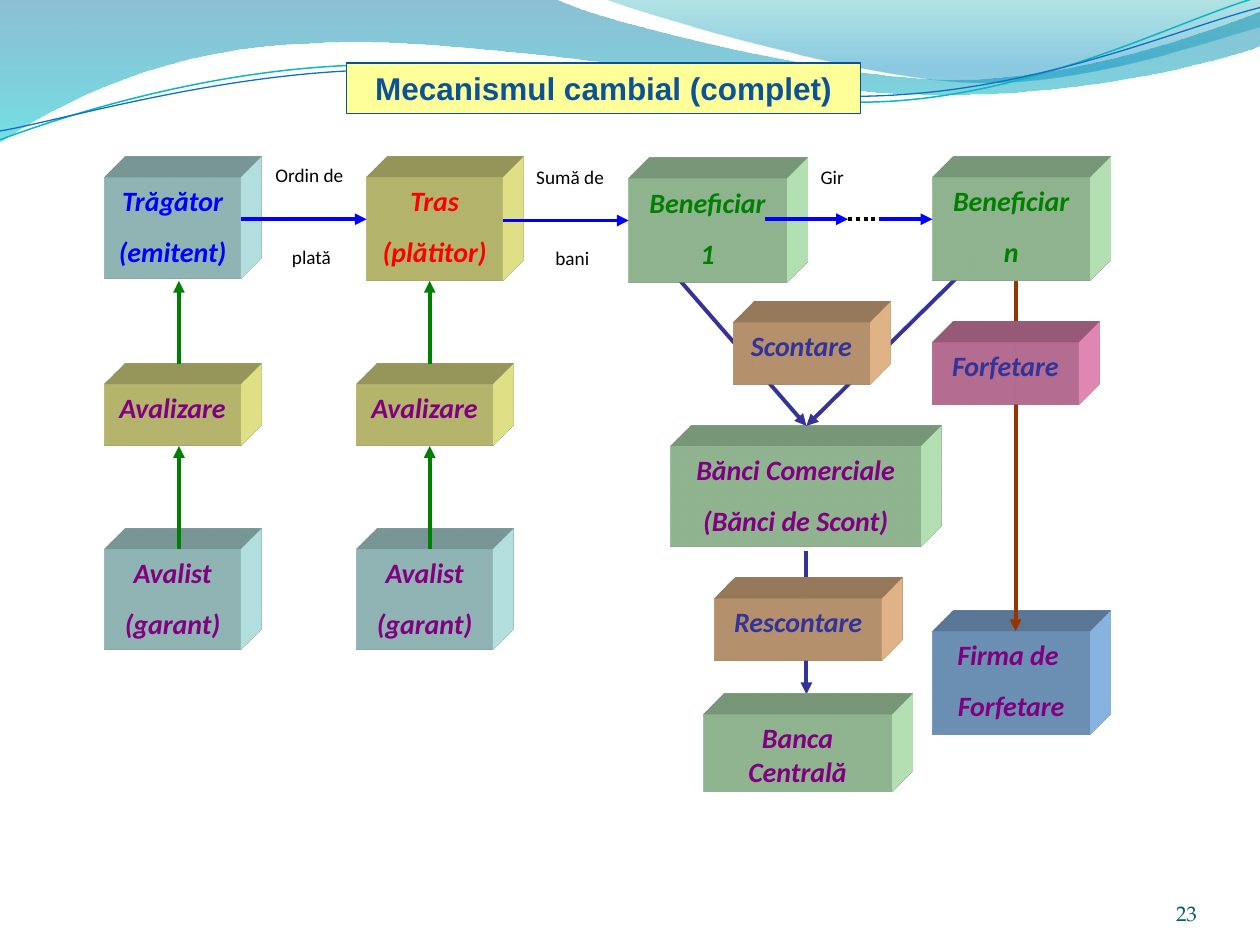
"""Builds the slide on the complete bill-of-exchange mechanism."""
from lxml import etree
from pptx import Presentation
from pptx.dml.color import RGBColor
from pptx.enum.dml import MSO_LINE
from pptx.enum.shapes import MSO_CONNECTOR, MSO_SHAPE
from pptx.enum.text import MSO_ANCHOR, PP_ALIGN
from pptx.oxml import parse_xml
from pptx.oxml.ns import nsdecls, qn
from pptx.util import Inches, Pt

RECT = MSO_SHAPE.RECTANGLE
STRAIGHT = MSO_CONNECTOR.STRAIGHT
DOTTED = MSO_LINE.ROUND_DOT
TOP, MIDDLE, BOTTOM = MSO_ANCHOR.TOP, MSO_ANCHOR.MIDDLE, MSO_ANCHOR.BOTTOM
CENTER, RIGHT = PP_ALIGN.CENTER, PP_ALIGN.RIGHT

COLORS = {
    "white": "FFFFFF", "black": "000000", "aqua": "CCFFFF", "yellow": "FFFF99",
    "mint": "CCFFCC", "peach": "FFCC99", "pink": "FF99CC", "sky": "99CCFF",
    "blue": "0000FF", "red": "FF0000", "green": "008000", "purple": "800080",
    "indigo": "333399", "brown": "993300", "title": "0B5394", "border": "095295",
    "number": "045D75", "teal_line": "0AB8BF", "blue_line": "0F6FC6",
    "deep_blue": "0074A1", "cyan": "00C6CF", "teal": "00A1A9", "azure": "008BBF",
}
FONTS = {
    "box": {"name": "Calibri", "size": Pt(16), "bold": True, "italic": True},
    "label": {"name": "Calibri", "size": Pt(11)},
    "title": {"name": "Arial", "size": Pt(18), "bold": True},
    "number": {"name": "TeX Gyre Pagella", "size": Pt(12)},
}


def rgb(name):
    """Return the named colour."""
    return RGBColor.from_string(COLORS[name])


class Board:
    """Holds the style and the slide being drawn."""

    def __init__(self, slide):
        self.shapes = slide.shapes

    def wave(self, start, segments, stops=None, line=None, width=0.75):
        """Draw a gradient band or an open curve from lines (2 numbers) and cubics (6)."""
        builder = self.shapes.build_freeform(*map(Inches, start), scale=1.0)
        ends = [tuple(map(Inches, seg[-2:])) for seg in segments]
        builder.add_line_segments(ends, close=bool(stops))
        sp = builder.convert_to_shape()
        self.bend(sp, segments)
        sp.shadow.inherit = False
        if not stops:
            sp.fill.background()
            sp.line.color.rgb = rgb(line)
            sp.line.width = Pt(width)
            return
        sp.line.fill.background()
        sp.fill.gradient()
        sp.fill.gradient_angle = 270
        for stop, (position, color, _) in zip(sp.fill.gradient_stops, stops):
            stop.position = position
            stop.color.rgb = rgb(color)
        for clr, (_, _, alpha) in zip(sp._element.spPr.iter(qn("a:srgbClr")), stops):
            etree.SubElement(clr, qn("a:alpha"), val=str(alpha * 1000))

    def bend(self, sp, segments):
        """Give the cubic segments of a freeform their control points."""
        for node, seg in zip(list(sp._element.iter(qn("a:lnTo"))), segments):
            if len(seg) == 6:
                node.tag = qn("a:cubicBezTo")
                for i, (x, y) in enumerate((seg[:2], seg[2:4])):
                    pt = etree.Element(qn("a:pt"), x=str(Inches(x) - sp.left),
                                       y=str(Inches(y) - sp.top))
                    node.insert(i, pt)

    def text(self, sp, lines, style, color, after=0, align=CENTER, anchor=TOP):
        """Write one paragraph per line into a shape."""
        tf = sp.text_frame
        tf.word_wrap = True
        tf.vertical_anchor = anchor
        for i, line in enumerate(lines):
            p = tf.paragraphs[0] if i == 0 else tf.add_paragraph()
            p.alignment = align
            p.space_after = Pt(after)
            r = p.add_run()
            r.text = line
            for key, value in FONTS[style].items():
                setattr(r.font, key, value)
            r.font.color.rgb = rgb(color)

    def rect(self, at, fill, line=None):
        """Add a plain rectangle."""
        sp = self.shapes.add_shape(RECT, *map(Inches, at))
        sp.shadow.inherit = False
        sp.fill.solid()
        sp.fill.fore_color.rgb = rgb(fill)
        if line:
            sp.line.color.rgb = rgb(line)
            sp.line.width = Pt(0.75)
        else:
            sp.line.fill.background()
        return sp

    def box(self, at, fill, color, *lines):
        """Add an extruded box with text."""
        sp = self.rect(at, fill)
        sp._element.spPr.append(parse_xml(
            f'<a:scene3d {nsdecls("a")}><a:camera prst="legacyObliqueTopRight"/>'
            '<a:lightRig rig="legacyFlat3" dir="b"/></a:scene3d>'))
        sp._element.spPr.append(parse_xml(
            f'<a:sp3d {nsdecls("a")} extrusionH="430200" prstMaterial="legacyMatte">'
            f'<a:extrusionClr><a:srgbClr val="{COLORS[fill]}"/></a:extrusionClr></a:sp3d>'))
        self.text(sp, lines, "box", color, after=10)

    def label(self, left, top, *lines):
        """Add a white caption whose lines sit above and below an arrow."""
        sp = self.rect((left, top, 0.91, 0.98), "white")
        self.text(sp, lines, "label", "black", after=33.4)

    def title(self, at, text):
        """Add the framed title."""
        self.text(self.rect(at, "yellow", "border"), [text], "title", "title", anchor=MIDDLE)

    def number(self, at, text):
        """Add the slide number."""
        sp = self.shapes.add_textbox(*map(Inches, at))
        for side in ("left", "top", "right", "bottom"):
            setattr(sp.text_frame, f"margin_{side}", 0)
        self.text(sp, [text], "number", "number", align=RIGHT, anchor=BOTTOM)

    def arrow(self, x1, y1, x2, y2, color, dash=None):
        """Add an arrow, or a headless line when dashed."""
        cx = self.shapes.add_connector(STRAIGHT, *map(Inches, (x1, y1, x2, y2)))
        cx.line.color.rgb = rgb(color)
        cx.line.width = Pt(2.25)
        if dash:
            cx.line.dash_style = dash
        else:
            etree.SubElement(cx.line._get_or_add_ln(), qn("a:tailEnd"), type="triangle")
        etree.SubElement(cx._element.spPr, qn("a:effectLst"))


def main():
    """Build and save the slide."""
    prs = Presentation()
    prs.slide_width, prs.slide_height = Inches(10), Inches(7.5)
    b = Board(prs.slides.add_slide(prs.slide_layouts[6]))

    b.wave((0, 0), [(4.4, -0.01), (4.76, 0.17, 6.64, 0.63, 7.58, 0.63),
                    (8.53, 0.63, 9.58, 0.26, 10, 0.09), (10.01, 0.36),
                    (9.83, 0.44, 8.7, 0.76, 7.46, 0.75), (6.22, 0.75, 3.82, 0.28, 2.57, 0.34),
                    (1.29, 0.36, 0.46, 0.83, -0.01, 1.13)],
           stops=[(0, "deep_blue", 45), (1, "cyan", 55)])
    b.wave((4.79, -0.01), [(5.09, 0.11, 6.82, 0.62, 7.69, 0.65),
                           (8.56, 0.69, 9.61, 0.32, 10, 0.21), (10, 0)],
           stops=[(0, "teal", 30), (0.8, "azure", 45)])
    b.wave((0, 1.11), [(0.48, 0.93, 1.58, 0.57, 2.77, 0.52), (3.95, 0.47, 5.93, 0.89, 7.13, 0.8),
                       (8.33, 0.71, 9.38, 0.15, 9.98, -0.02)], line="teal_line", width=0.85)
    b.wave((0, 1.04), [(0.47, 0.96, 1.64, 0.61, 2.83, 0.56), (4.03, 0.51, 5.97, 0.84, 7.17, 0.75),
                       (8.36, 0.67, 9.41, 0.21, 10, 0.06)], line="blue_line")
    b.number((8.67, 6.95, 0.83, 0.4), "23")

    b.box((7.4, 5.01, 1.25, 0.82), "sky", "purple", "Firma de ", "Forfetare")
    b.arrow(8.06, 2.23, 8.06, 5.01, "brown")
    b.box((7.4, 2.72, 1.16, 0.49), "pink", "indigo", "Forfetare")
    b.box((5.32, 3.54, 1.99, 0.8), "mint", "purple", "Bănci Comerciale", "(Bănci de Scont)")
    b.arrow(7.73, 2.07, 6.4, 3.38, "indigo")
    b.arrow(5.4, 2.23, 6.4, 3.38, "indigo")

    b.label(6.15, 1.26, "Gir")
    b.label(4.07, 1.26, "Sumă de", " bani")
    b.label(2, 1.25, "Ordin de", " plată")
    b.box((0.83, 1.41, 1.08, 0.8), "aqua", "blue", "Trăgător", "(emitent)")
    b.box((2.91, 1.41, 1.08, 0.82), "yellow", "red", "Tras", "(plătitor)")
    b.arrow(1.91, 1.74, 2.91, 1.74, "blue")
    b.box((4.99, 1.42, 1.25, 0.82), "mint", "green", "Beneficiar", "1")
    b.arrow(3.99, 1.75, 4.99, 1.75, "blue")
    b.box((7.4, 1.41, 1.25, 0.82), "mint", "green", "Beneficiar", "n")
    b.arrow(6.07, 1.74, 6.73, 1.74, "blue")
    b.arrow(6.73, 1.74, 6.98, 1.74, "black", DOTTED)
    b.arrow(6.98, 1.74, 7.4, 1.74, "blue")

    for left, middle in ((0.83, 1.42), (2.83, 3.41)):
        b.box((left, 3.05, 1.08, 0.49), "yellow", "purple", "Avalizare")
        b.box((left, 4.36, 1.08, 0.8), "aqua", "purple", "Avalist", "(garant)")
        b.arrow(middle, 4.36, middle, 3.54, "green")
        b.arrow(middle, 2.89, middle, 2.23, "green")

    b.box((5.82, 2.56, 1.08, 0.49), "peach", "indigo", "Scontare")
    b.arrow(6.4, 4.37, 6.4, 5.51, "indigo")
    b.box((5.67, 4.75, 1.33, 0.49), "peach", "indigo", "Rescontare")
    b.box((5.58, 5.67, 1.5, 0.61), "mint", "purple", "Banca Centrală")
    b.title((2.75, 0.5, 4.08, 0.4), "Mecanismul cambial (complet)")
    prs.save("out.pptx")


if __name__ == "__main__":
    main()
